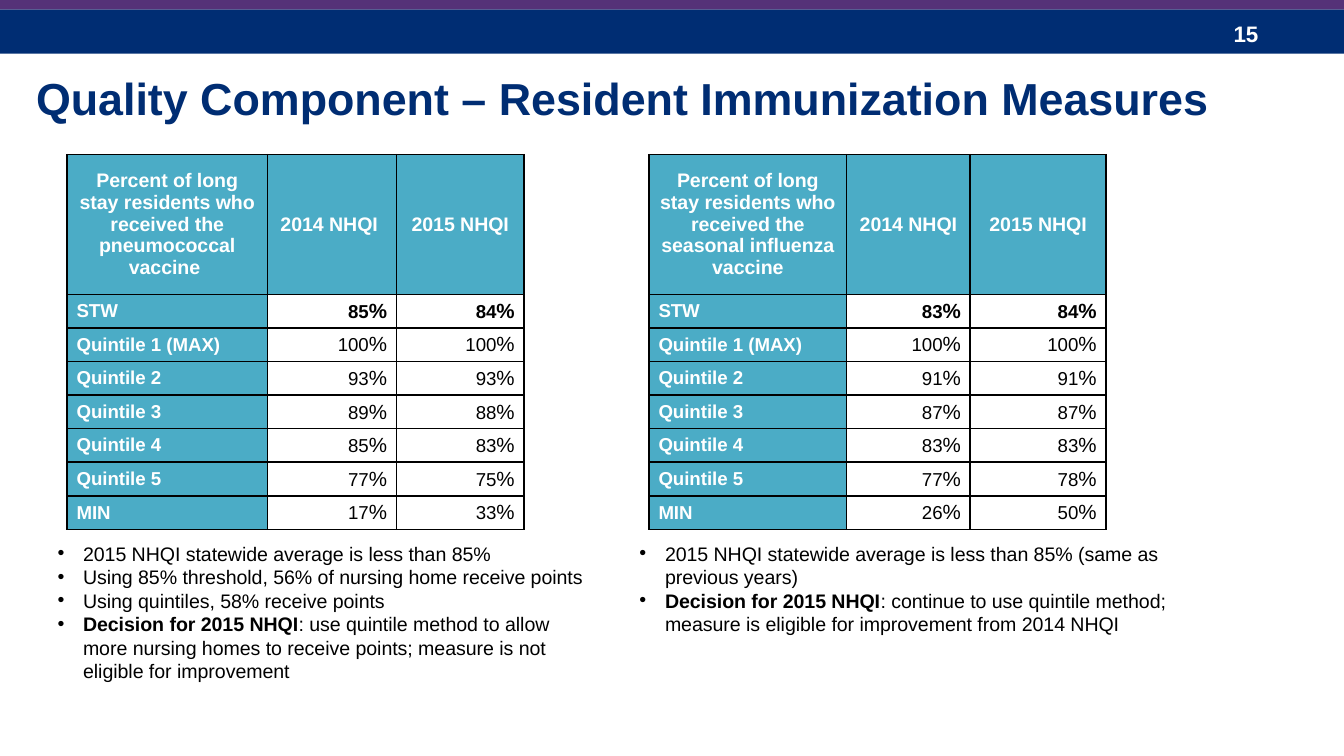
"""Build the resident immunization measures slide."""
from lxml import etree
from pptx import Presentation
from pptx import util as u
from pptx.dml import color as col
from pptx.enum import shapes, text
from pptx.oxml import ns

HUES = {"navy": "002D73", "plum": "553278", "teal": "4BACC6",
        "white": "FFFFFF", "black": "000000"}
LEFT, MID, RIGHT = text.PP_ALIGN.LEFT, text.PP_ALIGN.CENTER, text.PP_ALIGN.RIGHT
LABELS = ["STW", "Quintile 1 (MAX)", "Quintile 2", "Quintile 3",
          "Quintile 4", "Quintile 5", "MIN"]
PANELS = [
    {"x": 0.5, "cols": [1.49, 0.96, 0.95],
     "heads": ["Percent of long stay residents who received the pneumococcal vaccine ",
               "2014 NHQI ", "2015 NHQI"],
     "rates": [(85, 84), (100, 100), (93, 93), (89, 88), (85, 83), (77, 75), (17, 33)],
     "notes": [("", "2015 NHQI statewide average is less than 85%"),
               ("", "Using 85% threshold, 56% of nursing home receive points"),
               ("", "Using quintiles, 58% receive points"),
               ("Decision for 2015 NHQI",
                ": use quintile method to allow more nursing homes to receive points; "
                "measure is not eligible for improvement")]},
    {"x": 4.83, "cols": [1.47, 0.92, 1.01],
     "heads": ["Percent of long stay residents who received the seasonal influenza vaccine",
               "2014 NHQI", "2015 NHQI"],
     "rates": [(83, 84), (100, 100), (91, 91), (87, 87), (83, 83), (77, 78), (26, 50)],
     "notes": [("", "2015 NHQI statewide average is less than 85% (same as previous years)"),
               ("Decision for 2015 NHQI",
                ": continue to use quintile method; "
                "measure is eligible for improvement from 2014 NHQI")]},
]


def hue(name):
    """Return the named colour."""
    return col.RGBColor.from_string(HUES[name])


def put(item, forms):
    """Set each attribute of an item from a dict."""
    for key, value in forms.items():
        setattr(item, key, value)


def add_run(para, words, size, tint, bold=False):
    """Add a styled run to a paragraph."""
    run = para.add_run()
    run.text = words
    put(run.font, {"name": "Arial", "size": u.Pt(size), "bold": bold})
    run.font.color.rgb = hue(tint)


def add_bar(slide, top, high, tint):
    """Add a full-width band."""
    bar = slide.shapes.add_shape(shapes.MSO_SHAPE.RECTANGLE, 0, u.Inches(top),
                                 u.Inches(10), u.Inches(high))
    bar.shadow.inherit = False
    bar.fill.solid()
    bar.fill.fore_color.rgb = hue(tint)
    bar.line.fill.background()


def add_box(slide, *area):
    """Add a wrapping text box and return its frame."""
    frame = slide.shapes.add_textbox(*map(u.Inches, area)).text_frame
    put(frame, {"word_wrap": True, "vertical_anchor": text.MSO_ANCHOR.TOP})
    return frame


def add_edges(cell):
    """Draw thin black borders around a cell."""
    props = cell._tc.get_or_add_tcPr()
    for spot, side in enumerate(("a:lnL", "a:lnR", "a:lnT", "a:lnB")):
        line = etree.Element(ns.qn(side), w=str(u.Pt(1)))
        fill = etree.SubElement(line, ns.qn("a:solidFill"))
        etree.SubElement(fill, ns.qn("a:srgbClr"), val=HUES["black"])
        props.insert(spot, line)


def fill_cell(cell, tint, align, runs):
    """Style a cell and write its runs."""
    put(cell, {"margin_left": u.Inches(0.07), "margin_right": u.Inches(0.07),
               "margin_top": 0, "margin_bottom": 0,
               "vertical_anchor": text.MSO_ANCHOR.MIDDLE})
    cell.fill.solid()
    cell.fill.fore_color.rgb = hue(tint)
    add_edges(cell)
    para = cell.text_frame.paragraphs[0]
    para.alignment = align
    for run in runs:
        add_run(para, *run)


def add_grid(slide, panel):
    """Add the table of rates for one vaccine."""
    highs = [1.04] + [0.25] * len(LABELS)
    grid = slide.shapes.add_table(len(highs), 3, u.Inches(panel["x"]), u.Inches(1.15),
                                  u.Inches(sum(panel["cols"])),
                                  u.Inches(sum(highs))).table
    for part, wide in zip(grid.columns, panel["cols"]):
        part.width = u.Inches(wide)
    for part, high in zip(grid.rows, highs):
        part.height = u.Inches(high)
    for c, head in enumerate(panel["heads"]):
        fill_cell(grid.cell(0, c), "teal", MID, [(head, 10.5, "white", True)])
    for r, (label, rates) in enumerate(zip(LABELS, panel["rates"]), 1):
        fill_cell(grid.cell(r, 0), "teal", LEFT, [(label, 10, "white", True)])
        for c, rate in enumerate(rates, 1):
            fill_cell(grid.cell(r, c), "white", RIGHT,
                      [(str(rate), 10, "black", r == 1), ("%", 11, "black", r == 1)])


def add_notes(slide, panel):
    """Add the bulleted notes below a table."""
    frame = add_box(slide, panel["x"] - 0.17, 3.98, 4.17, 1.75)
    for spot, (lead, rest) in enumerate(panel["notes"]):
        para = frame.add_paragraph() if spot else frame.paragraphs[0]
        props = para._p.get_or_add_pPr()
        props.set("marL", str(u.Inches(0.19)))
        props.set("indent", str(-u.Inches(0.19)))
        etree.SubElement(props, ns.qn("a:buFont"), typeface="Arial")
        etree.SubElement(props, ns.qn("a:buChar"), char="•")
        if lead:
            add_run(para, lead, 10.5, "black", True)
        add_run(para, rest, 10.5, "black")


def main():
    """Build and save the slide."""
    deck = Presentation()
    wide = u.Inches(10)
    put(deck, {"slide_width": wide, "slide_height": wide * 9 // 16})
    slide = deck.slides.add_slide(deck.slide_layouts[6])
    add_bar(slide, 0.07, 0.33, "navy")
    add_bar(slide, -0.02, 0.09, "plum")
    page = add_box(slide, 9.08, 0.1, 0.75, 0.3)
    add_run(page.paragraphs[0], "15", 12, "white", True)
    title = add_box(slide, 0.17, 0.48, 9.33, 0.58)
    add_run(title.paragraphs[0], "Quality Component – Resident Immunization Measures",
            24, "navy", True)
    for panel in PANELS:
        add_grid(slide, panel)
        add_notes(slide, panel)
    deck.save("out.pptx")


if __name__ == "__main__":
    main()
